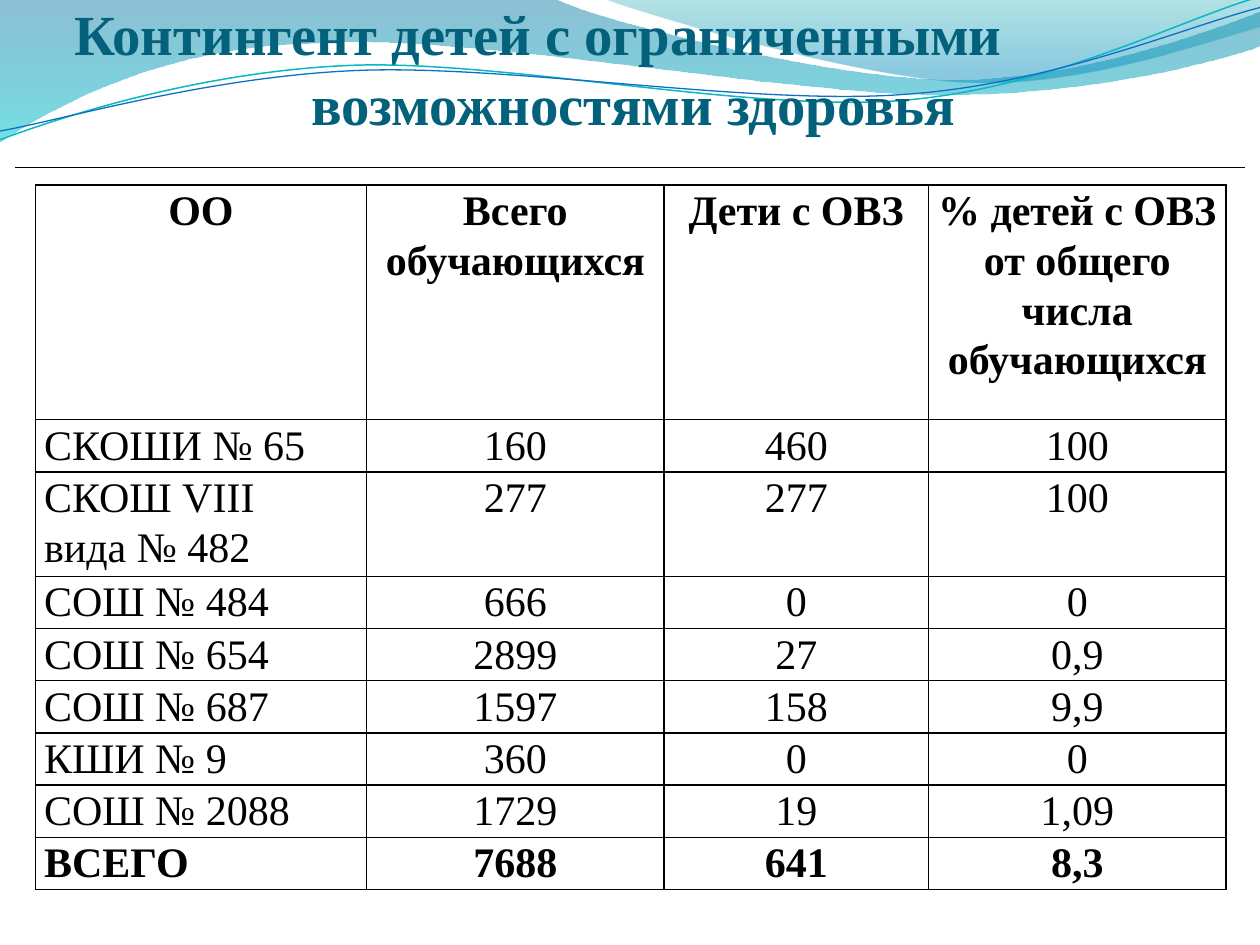
from lxml import etree
from pptx import Presentation
from pptx.dml.color import RGBColor
from pptx.enum.text import MSO_ANCHOR, MSO_AUTO_SIZE, PP_ALIGN
from pptx.oxml.ns import qn
from pptx.util import Inches, Pt

BLACK = RGBColor(0x00, 0x00, 0x00)
TITLE_TEAL = RGBColor(0x04, 0x61, 0x7B)
DEEP_BLUE = RGBColor(0x00, 0x74, 0xA1)
AQUA = RGBColor(0x00, 0xC6, 0xCF)
SEA_GREEN = RGBColor(0x00, 0xA1, 0xA9)
SKY_BLUE = RGBColor(0x00, 0x8B, 0xBF)
LINE_TEAL = RGBColor(0x0A, 0xB8, 0xBF)
LINE_BLUE = RGBColor(0x0F, 0x6F, 0xC6)
FONT = "Times New Roman"
UNITS = 100  # outline units per inch

prs = Presentation()
prs.slide_width, prs.slide_height = Inches(10), Inches(7.5)
slide = prs.slides.add_slide(prs.slide_layouts[5])
shapes = slide.shapes


def add_wave(segments, closed):
    """Draw a start point, then lines (2 numbers) and Bezier curves (6 numbers), in inches."""
    points = [(round(s[i] * UNITS), round(s[i + 1] * UNITS))
              for s in segments for i in range(0, len(s), 2)]
    builder = shapes.build_freeform(*points[0], scale=Inches(1) / UNITS)
    builder.add_line_segments(points[1:], close=closed)
    wave = builder.convert_to_shape()
    wave.shadow.inherit = False
    # Join the three points of each curve into one Bezier element
    steps = iter(list(wave._element.iter(qn("a:lnTo"))))
    for segment in segments[1:]:
        first = next(steps)
        if len(segment) == 6:
            first.tag = qn("a:cubicBezTo")
            for extra in (next(steps), next(steps)):
                first.append(extra[0])
                extra.getparent().remove(extra)
    return wave


def format_cell(cell, sides, width):
    """Draw borders on the given sides (letters of LRTB), hide the others, clear the fill."""
    properties = cell._tc.get_or_add_tcPr()
    for side in "LRTB":
        border = etree.SubElement(properties, qn(f"a:ln{side}"), w=str(Pt(width)))
        if side in sides:
            fill = etree.SubElement(border, qn("a:solidFill"))
            etree.SubElement(fill, qn("a:srgbClr"), val=str(BLACK))
        else:
            etree.SubElement(border, qn("a:noFill"))
    cell.fill.background()


# Gradient waves: outline, then (position, colour, opacity) of each stop
gradient_waves = [
    ([(0, 0), (4.4, -0.01), (4.76, 0.17, 6.64, 0.63, 7.58, 0.63),
      (8.53, 0.63, 9.58, 0.26, 10, 0.09), (10.01, 0.36),
      (9.83, 0.44, 8.7, 0.76, 7.46, 0.75), (6.22, 0.75, 3.82, 0.28, 2.57, 0.34),
      (1.29, 0.36, 0.46, 0.83, -0.01, 1.13)],
     [(0, DEEP_BLUE, 45), (1, AQUA, 55)]),
    ([(4.79, -0.01), (5.09, 0.11, 6.82, 0.62, 7.69, 0.65),
      (8.56, 0.69, 9.61, 0.32, 10, 0.21), (10, 0)],
     [(0, SEA_GREEN, 30), (0.8, SKY_BLUE, 45)]),
]
for outline, stops in gradient_waves:
    wave = add_wave(outline, closed=True)
    wave.line.fill.background()
    wave.fill.gradient()
    wave.fill.gradient_angle = 270
    for stop, (position, color, _) in zip(wave.fill.gradient_stops, stops):
        stop.position = position
        stop.color.rgb = color
    for rgb, (_, _, opacity) in zip(wave._element.spPr.iter(qn("a:srgbClr")), stops):
        etree.SubElement(rgb, qn("a:alpha"), val=str(opacity * 1000))

wave_lines = [
    ([(0, 1.11), (0.48, 0.93, 1.58, 0.57, 2.77, 0.52), (3.95, 0.47, 5.93, 0.89, 7.13, 0.8),
      (8.33, 0.71, 9.38, 0.15, 9.98, -0.02)], LINE_TEAL, 0.85),
    ([(0, 1.04), (0.47, 0.96, 1.64, 0.61, 2.83, 0.56), (4.03, 0.51, 5.97, 0.84, 7.17, 0.75),
      (8.36, 0.67, 9.41, 0.21, 10, 0.06)], LINE_BLUE, 0.75),
]
for outline, color, width in wave_lines:
    wave = add_wave(outline, closed=False)
    wave.fill.background()
    wave.line.color.rgb = color
    wave.line.width = Pt(width)

# Title, brought in front of the waves
title = shapes.title
shapes._spTree.append(title._element)
title.left, title.top = Inches(0.17), Inches(0.36)
title.width, title.height = Inches(9.56), Inches(1.26)
frame = title.text_frame
frame.auto_size = MSO_AUTO_SIZE.NONE
frame.word_wrap = True
frame.vertical_anchor = MSO_ANCHOR.BOTTOM
frame.margin_left = frame.margin_right = 0
frame.margin_top, frame.margin_bottom = Inches(0.05), Inches(0.53)
frame.text = "Контингент детей с ограниченными\nвозможностями здоровья"
for paragraph, indent in zip(frame.paragraphs, (0.42, 2.3)):
    paragraph.alignment = PP_ALIGN.LEFT
    paragraph.line_spacing = 1.03
    paragraph._p.get_or_add_pPr().set("marL", str(Inches(indent)))
    paragraph.font.name = FONT
    paragraph.font.size = Pt(32.4)
    paragraph.font.bold = True
    paragraph.font.color.rgb = TITLE_TEAL

# Empty one-row table that rules off the title
rule_widths = [2.09, 0.78, 0.74, 0.74, 0.79, 0.91, 0.96, 0.96, 0.95, 0.84]
rule = shapes.add_table(1, len(rule_widths), Inches(0.12), Inches(1.15),
                        Inches(9.76), Inches(0.18)).table
rule.first_row = rule.horz_banding = False
for column, width in zip(rule.columns, rule_widths):
    column.width = Inches(width)
for cell in rule.iter_cells():
    format_cell(cell, "B", 0.5)
    cell.margin_top = cell.margin_bottom = 0
    cell.text_frame.paragraphs[0].font.size = Pt(8)

# Pupils by school
pupils = [
    ("ОО", "Всего обучающихся", "Дети с ОВЗ", "% детей с ОВЗ от общего числа обучающихся"),
    ("СКОШИ № 65", "160", "460", "100"),
    ("СКОШ VIII\vвида № 482", "277", "277", "100"),
    ("СОШ № 484", "666", "0", "0"),
    ("СОШ № 654", "2899", "27", "0,9"),
    ("СОШ № 687", "1597", "158", "9,9"),
    ("КШИ № 9", "360", "0", "0"),
    ("СОШ № 2088", "1729", "19", "1,09"),
    ("ВСЕГО", "7688", "641", "8,3"),
]
last = len(pupils) - 1
tall_rows = {0: 1.86, 2: 0.83}
row_height = (5.59 - sum(tall_rows.values())) / (len(pupils) - len(tall_rows))
pupil_table = shapes.add_table(len(pupils), 4, Inches(0.28), Inches(1.47),
                               Inches(9.45), Inches(5.59)).table
pupil_table.first_row = pupil_table.horz_banding = False
for column, width in zip(pupil_table.columns, (2.63, 2.36, 2.1, 2.36)):
    column.width = Inches(width)
for r, values in enumerate(pupils):
    pupil_table.rows[r].height = Inches(tall_rows.get(r, row_height))
    for c, value in enumerate(values):
        cell = pupil_table.cell(r, c)
        format_cell(cell, "LRTB", 1)
        cell.margin_left = cell.margin_right = Inches(0.07)
        cell.margin_top = cell.margin_bottom = 0
        cell.text = value
        paragraph = cell.text_frame.paragraphs[0]
        paragraph.alignment = PP_ALIGN.LEFT if c == 0 and r > 0 else PP_ALIGN.CENTER
        paragraph.line_spacing = 1.07
        paragraph.font.name = FONT
        paragraph.font.size = Pt(24)
        paragraph.font.bold = r in (0, last)
        paragraph.font.color.rgb = BLACK

prs.save("out.pptx")
